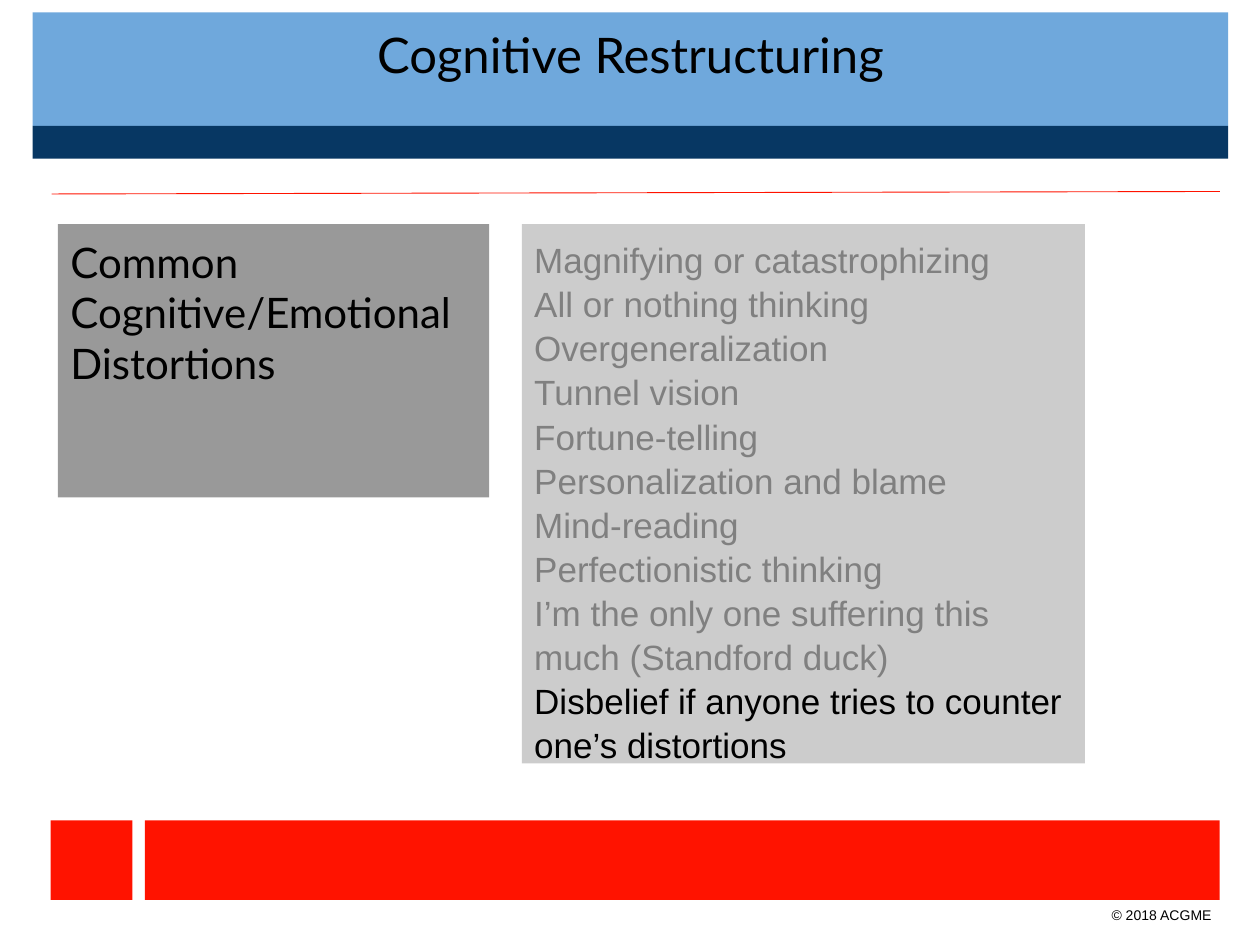
"""Build the Cognitive Restructuring slide."""
from dataclasses import dataclass

import lxml.etree
import pptx
import pptx.dml.color
import pptx.enum.shapes
import pptx.enum.text
import pptx.oxml.ns
import pptx.util
from pptx.util import Cm

COLORS = {
    "red": "FF1300",
    "sky": "6FA8DC",
    "navy": "073763",
    "dark_gray": "999999",
    "light_gray": "CCCCCC",
    "faded": "808080",
    "black": "000000",
}
INSET = Cm(0.25)
DISTORTIONS = [
    "Magnifying or catastrophizing",
    "All or nothing thinking",
    "Overgeneralization",
    "Tunnel vision",
    "Fortune-telling",
    "Personalization and blame",
    "Mind-reading",
    "Perfectionistic thinking",
    "I’m the only one suffering this much (Standford duck)",
    "Disbelief if anyone tries to counter one’s distortions",
]


@dataclass(frozen=True)
class Box:
    """Position and size in centimetres."""

    left: float
    top: float
    width: float
    height: float

    def lengths(self) -> tuple:
        return Cm(self.left), Cm(self.top), Cm(self.width), Cm(self.height)


@dataclass(frozen=True)
class TextStyle:
    """Paragraph formatting shared by a text block."""

    font: str
    size: float
    color: str = "black"
    alignment: pptx.enum.text.PP_ALIGN = pptx.enum.text.PP_ALIGN.LEFT
    line_spacing: float = 1.0


def rgb(name: str) -> pptx.dml.color.RGBColor:
    return pptx.dml.color.RGBColor.from_string(COLORS[name])


def fill_solid(shape, color: str) -> None:
    shape.fill.solid()
    shape.fill.fore_color.rgb = rgb(color)


def add_rectangle(slide, box: Box, color: str):
    shape = slide.shapes.add_shape(
        pptx.enum.shapes.MSO_SHAPE.RECTANGLE, *box.lengths()
    )
    fill_solid(shape, color)
    shape.line.fill.background()
    shape.shadow.inherit = False
    return shape


def write_text(shape, lines: list[str], style: TextStyle) -> None:
    frame = shape.text_frame
    frame.word_wrap = True
    frame.auto_size = pptx.enum.text.MSO_AUTO_SIZE.NONE
    frame.vertical_anchor = pptx.enum.text.MSO_ANCHOR.TOP
    frame.margin_left = frame.margin_right = INSET
    frame.margin_top = frame.margin_bottom = INSET
    frame.text = "\n".join(lines)
    for paragraph in frame.paragraphs:
        paragraph.alignment = style.alignment
        paragraph.line_spacing = style.line_spacing
        paragraph.font.name = style.font
        paragraph.font.size = pptx.util.Pt(style.size)
        paragraph.font.color.rgb = rgb(style.color)


def add_rule(slide) -> None:
    rule = slide.shapes.add_connector(
        pptx.enum.shapes.MSO_CONNECTOR.STRAIGHT,
        Cm(1.04), Cm(3.91), Cm(24.59), Cm(3.86),
    )
    rule.line.color.rgb = rgb("red")
    rule.line.width = pptx.util.Pt(0.5)
    properties = rule._element.spPr
    lxml.etree.SubElement(properties, pptx.oxml.ns.qn("a:effectLst"))


def add_copyright(slide) -> None:
    box = Box(21.5, 18.14, 3.18, 0.61)
    shape = slide.shapes.add_textbox(*box.lengths())
    style = TextStyle("Arial", 8, alignment=pptx.enum.text.PP_ALIGN.RIGHT)
    write_text(shape, ["© 2018 ACGME"], style)
    frame = shape.text_frame
    frame.margin_top = frame.margin_bottom = 0
    frame.vertical_anchor = pptx.enum.text.MSO_ANCHOR.MIDDLE


def add_title(slide) -> None:
    title = slide.shapes.title
    box = Box(0.66, 0.25, 24.1, 2.29)
    title.left, title.top, title.width, title.height = box.lengths()
    fill_solid(title, "sky")
    style = TextStyle("Lato", 28, alignment=pptx.enum.text.PP_ALIGN.CENTER)
    write_text(title, ["Cognitive Restructuring"], style)


def main() -> None:
    presentation = pptx.Presentation()
    presentation.slide_width, presentation.slide_height = Cm(25.4), Cm(19.05)
    slide = presentation.slides.add_slide(presentation.slide_layouts[5])

    add_rectangle(slide, Box(2.92, 16.54, 21.67, 1.6), "red")
    add_rectangle(slide, Box(1.02, 16.54, 1.65, 1.6), "red")
    add_rule(slide)
    add_copyright(slide)
    add_title(slide)
    add_rectangle(slide, Box(0.66, 2.54, 24.1, 0.66), "navy")

    topic = add_rectangle(slide, Box(1.17, 4.52, 8.69, 5.51), "dark_gray")
    write_text(
        topic,
        ["Common", "Cognitive/Emotional", "Distortions"],
        TextStyle("Lato", 24),
    )
    panel = add_rectangle(slide, Box(10.52, 4.52, 11.35, 10.87), "light_gray")
    write_text(
        panel, DISTORTIONS, TextStyle("Arial", 20, "faded", line_spacing=1.05)
    )
    panel.text_frame.paragraphs[-1].font.color.rgb = rgb("black")

    presentation.save("out.pptx")


if __name__ == "__main__":
    main()
